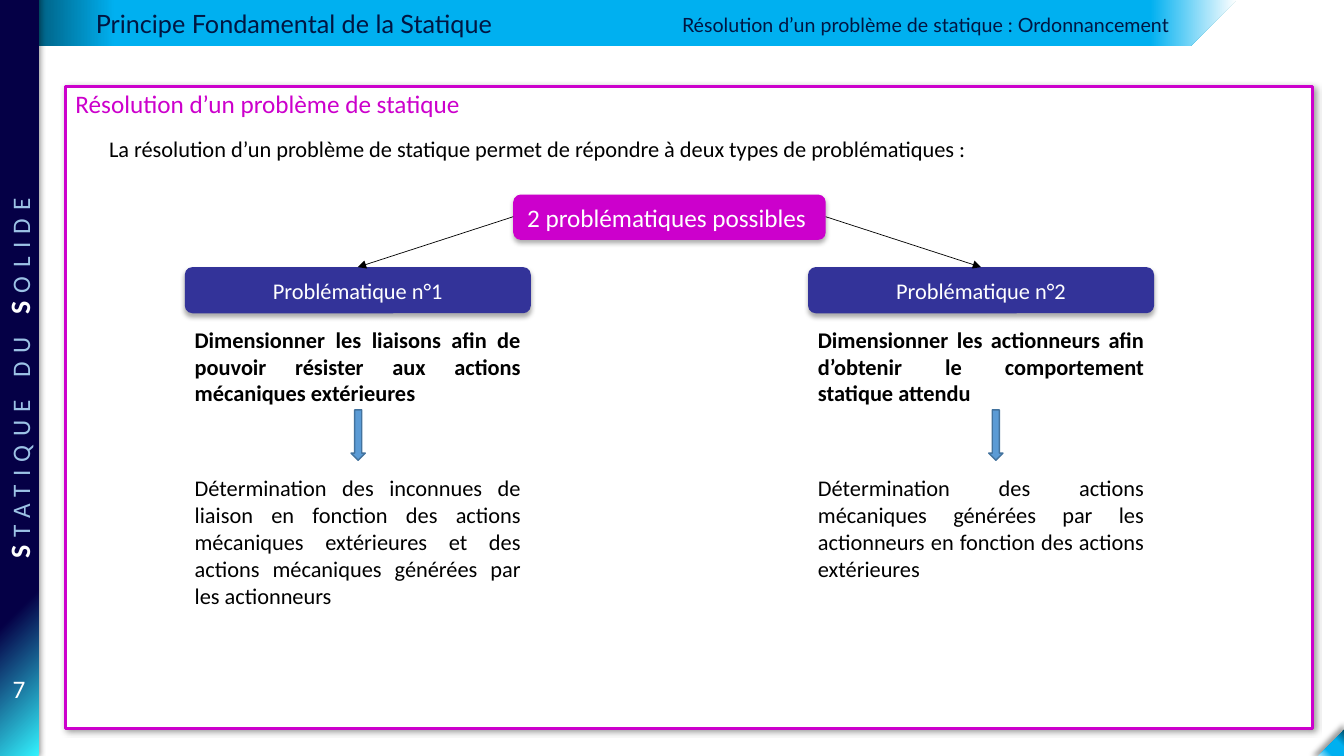
"""Build the slide on the two kinds of statics problems."""
from dataclasses import dataclass

from lxml import etree
from pptx import Presentation
from pptx.dml.color import RGBColor
from pptx.enum.shapes import MSO_CONNECTOR, MSO_SHAPE
from pptx.enum.text import MSO_ANCHOR, MSO_AUTO_SIZE, PP_ALIGN
from pptx.oxml import parse_xml
from pptx.oxml.ns import nsdecls, qn
from pptx.util import Inches, Pt

ROUNDED, RECTANGLE = MSO_SHAPE.ROUNDED_RECTANGLE, MSO_SHAPE.RECTANGLE
PROCESS, DOWN_ARROW = MSO_SHAPE.FLOWCHART_ALTERNATE_PROCESS, MSO_SHAPE.DOWN_ARROW
STRAIGHT = MSO_CONNECTOR.STRAIGHT
TOP, MIDDLE = MSO_ANCHOR.TOP, MSO_ANCHOR.MIDDLE
LEFT, CENTER, RIGHT, JUSTIFY = PP_ALIGN.LEFT, PP_ALIGN.CENTER, PP_ALIGN.RIGHT, PP_ALIGN.JUSTIFY
NO_FIT = MSO_AUTO_SIZE.NONE

BLACK = RGBColor(0x00, 0x00, 0x00)
WHITE = RGBColor(0xFF, 0xFF, 0xFF)
NAVY = RGBColor(0x00, 0x16, 0x42)
MAGENTA = RGBColor(0xCC, 0x00, 0xCC)
INDIGO = RGBColor(0x33, 0x33, 0x99)
ARROW_BLUE = RGBColor(0x5B, 0x9B, 0xD5)
ARROW_EDGE = RGBColor(0x43, 0x73, 0x9E)
PALE_BLUE = RGBColor(0x9C, 0xC2, 0xE5)
TEAL = RGBColor(0x00, 0x3E, 0x54)
SKY = RGBColor(0x00, 0xB0, 0xF0)
CYAN = RGBColor(0x33, 0xF3, 0xFF)
MIDNIGHT = RGBColor(0x05, 0x00, 0x46)

COLUMNS, ROWS = 160, 90
WIDTH, HEIGHT = Inches(13.333), Inches(7.5)


@dataclass(frozen=True)
class Area:
    """A rectangle in columns and rows of the grid."""
    left: float
    top: float
    width: float
    height: float

    def lengths(self) -> tuple:
        """Return the rectangle in slide units."""
        return across(self.left), down(self.top), across(self.width), down(self.height)


@dataclass(frozen=True)
class Shadow:
    """An outer shadow: opacity in percent, lengths in points, angle in degrees."""
    opacity: int
    blur: float
    distance: float
    angle: int


@dataclass(frozen=True)
class Branch:
    """One kind of problem with its aim and its method."""
    left: float
    hub_side: float
    arrow_left: float
    label: str
    aim: str
    method: str
    method_height: float


BOX_SHADOW = Shadow(32, 3.5, 2.2, 90)
BRANCHES = (
    Branch(22, 61.1, 41.8, "Problématique n°1",
           "Dimensionner les liaisons afin de pouvoir résister aux actions mécaniques extérieures",
           "Détermination des inconnues de liaison en fonction des actions mécaniques extérieures "
           "et des actions mécaniques générées par les actionneurs", 17.4),
    Branch(96.2, 98.3, 117.7, "Problématique n°2",
           "Dimensionner les actionneurs afin d’obtenir le comportement statique attendu",
           "Détermination des actions mécaniques générées par les actionneurs en fonction "
           "des actions extérieures", 14.2),
)
MOTTO = (("S", 20, WHITE), ("TATIQUE DU ", 18, PALE_BLUE), ("S", 20, WHITE), ("OLIDE", 18, PALE_BLUE))


def across(columns: float) -> int:
    """Convert columns to slide units."""
    return round(columns * WIDTH / COLUMNS)


def down(rows: float) -> int:
    """Convert rows to slide units."""
    return round(rows * HEIGHT / ROWS)


def add_text(box, text: str, *, size: float = 16, color=BLACK, font: str = "Calibri",
             bold: bool = False, align=LEFT, anchor=TOP, spacing: float = 0):
    """Append a formatted span to the first paragraph of a box."""
    frame = box.text_frame
    frame.word_wrap, frame.auto_size, frame.vertical_anchor = True, NO_FIT, anchor
    para = frame.paragraphs[0]
    para.alignment, para.line_spacing = align, 1.0
    span = para.add_run()
    span.text = text
    span.font.size, span.font.name, span.font.bold = Pt(size), font, bold
    span.font.color.rgb = color
    if spacing:
        span.font._element.set("spc", str(round(spacing * 100)))
    return box


def add_box(page, area: Area):
    """Add an empty text box."""
    return page.shapes.add_textbox(*area.lengths())


def set_shadow(shape, shadow: Shadow) -> None:
    """Give a shape a black outer shadow."""
    effects = shape.element.spPr.find(qn("a:effectLst"))
    effects.append(parse_xml(
        f'<a:outerShdw {nsdecls("a")} blurRad="{Pt(shadow.blur)}" dist="{Pt(shadow.distance)}" '
        f'dir="{shadow.angle * 60000}" algn="ctr" rotWithShape="0"><a:srgbClr val="{BLACK}">'
        f'<a:alpha val="{shadow.opacity * 1000}"/></a:srgbClr></a:outerShdw>'))


def set_gradient(shape, stops: tuple, angle: int) -> None:
    """Fill a shape with a linear gradient of (percent, color) stops."""
    marks = "".join(f'<a:gs pos="{share * 1000}"><a:srgbClr val="{color}"/></a:gs>'
                    for share, color in stops)
    shape.fill.background()
    blank = shape.element.spPr.find(qn("a:noFill"))
    shape.element.spPr.replace(blank, parse_xml(
        f'<a:gradFill {nsdecls("a")} rotWithShape="1"><a:gsLst>{marks}</a:gsLst>'
        f'<a:lin ang="{angle * 60000}" scaled="0"/></a:gradFill>'))


def add_figure(page, kind, area: Area, fill, line=None, line_width: float = 1, shadow=None):
    """Add a preset shape with a plain fill."""
    shape = page.shapes.add_shape(kind, *area.lengths())
    shape.shadow.inherit = False
    shape.fill.solid()
    shape.fill.fore_color.rgb = fill
    if line is None:
        shape.line.fill.background()
    else:
        shape.line.color.rgb, shape.line.width = line, Pt(line_width)
    if shadow:
        set_shadow(shape, shadow)
    return shape


def add_outline(page, points: tuple, stops: tuple, angle: int):
    """Add a closed polygon with a gradient fill."""
    first, *others = [(across(x), down(y)) for x, y in points]
    builder = page.shapes.build_freeform(*first)
    builder.add_line_segments(others, close=True)
    shape = builder.convert_to_shape()
    shape.shadow.inherit = False
    shape.line.fill.background()
    set_gradient(shape, stops, angle)
    return shape


def add_arrow(page, start: tuple, end: tuple) -> None:
    """Add a thin line that ends in a triangle."""
    arrow = page.shapes.add_connector(STRAIGHT, across(start[0]), down(start[1]),
                                      across(end[0]), down(end[1]))
    arrow.line.color.rgb, arrow.line.width = BLACK, Pt(0.5)
    etree.SubElement(arrow.line._get_or_add_ln(), qn("a:tailEnd"), type="triangle")
    etree.SubElement(arrow.element.spPr, qn("a:effectLst"))


def add_decor(page) -> None:
    """Draw the banner with its title, the side bar and the corner."""
    banner = add_outline(page, ((0.5, 0), (147.2, 0), (141.7, 5.5), (0.5, 5.5)),
                         ((0, TEAL), (9, SKY), (93, SKY), (100, WHITE)), 0)
    title = page.shapes.title
    title.left, title.top, title.width, title.height = Area(10.2, 0.36, 58.7, 5).lengths()
    add_text(title, "Principe Fondamental de la Statique", size=18, color=NAVY, font="Lato")
    banner.element.addnext(title.element)
    bar = add_figure(page, RECTANGLE, Area(0, -4.9, 4.6, 94.9), MIDNIGHT, shadow=Shadow(40, 4, 1, 0))
    set_gradient(bar, ((0, CYAN), (20, MIDNIGHT)), 225)
    motto = add_box(page, Area(-42.7, 42.4, 90, 5.3))
    motto.rotation = 270
    for text, size, color in MOTTO:
        add_text(motto, text, size=size, color=color, bold=color == WHITE, align=CENTER, spacing=6)
    corner = add_outline(page, ((160.3, 86.6), (156.6, 90.4), (160.8, 90.4)),
                         ((10, TEAL), (40, SKY), (69, SKY), (100, WHITE)), 135)
    set_shadow(corner, Shadow(40, 4, 3, 225))


def add_branch(page, branch: Branch) -> None:
    """Draw one branch from the hub down to its method."""
    label = add_figure(page, ROUNDED, Area(branch.left, 31.8, 41.2, 5.5), INDIGO, shadow=BOX_SHADOW)
    add_text(label, branch.label, color=WHITE, align=CENTER, anchor=MIDDLE)
    add_arrow(page, (branch.hub_side, 25.8), (branch.left + 20.6, 31.8))
    add_text(add_box(page, Area(branch.left, 38.2, 41.2, 10.9)), branch.aim, bold=True, align=JUSTIFY)
    add_figure(page, DOWN_ARROW, Area(branch.arrow_left, 48.8, 1.7, 6), ARROW_BLUE, ARROW_EDGE)
    add_text(add_box(page, Area(branch.left, 55.9, 41.2, branch.method_height)),
             branch.method, align=JUSTIFY)


def main() -> None:
    """Build and save the deck."""
    deck = Presentation()
    deck.slide_width, deck.slide_height = WIDTH, HEIGHT
    page = deck.slides.add_slide(deck.slide_layouts.get_by_name("Title Only"))
    add_decor(page)
    panel = add_figure(page, ROUNDED, Area(7.8, 10.3, 148.4, 76.4), WHITE, MAGENTA, 2.25,
                       Shadow(40, 4, 2, 45))
    panel.adjustments[0] = 0
    add_text(add_box(page, Area(7.8, 9.96, 50.3, 4.8)), "Résolution d’un problème de statique",
             size=18, color=MAGENTA)
    hub = add_figure(page, PROCESS, Area(61.1, 23.16, 37.2, 5.4), MAGENTA, shadow=BOX_SHADOW)
    add_text(hub, "2 problématiques possibles ", size=18, color=WHITE, align=CENTER, anchor=MIDDLE)
    add_text(add_box(page, Area(63, 0.96, 77.4, 4.1)),
             "Résolution d’un problème de statique : Ordonnancement",
             size=14, color=NAVY, font="Lato", align=RIGHT)
    add_text(add_box(page, Area(11.8, 15.5, 142, 4.4)),
             "La résolution d’un problème de statique permet de répondre à deux types de problématiques :")
    for branch in BRANCHES:
        add_branch(page, branch)
    add_text(add_box(page, Area(-0.8, 79.6, 6.1, 4.8)), "7", size=18, color=WHITE, align=CENTER)
    deck.save("out.pptx")


if __name__ == "__main__":
    main()
